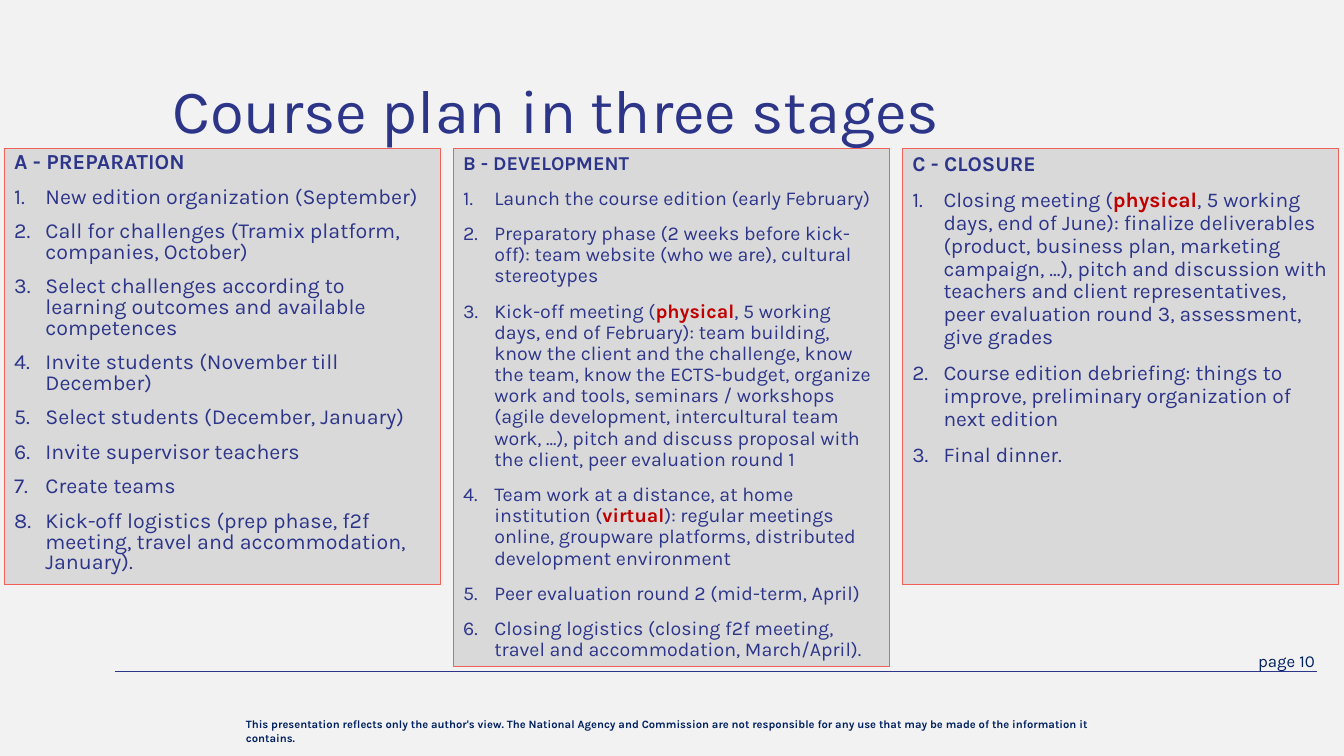
"""Build a slide with the three stages of a course plan."""
from lxml import etree
from pptx import Presentation
from pptx.dml.color import RGBColor
from pptx.enum.shapes import MSO_CONNECTOR, MSO_SHAPE
from pptx.enum.text import MSO_ANCHOR, MSO_AUTO_SIZE, PP_ALIGN
from pptx.oxml.ns import qn
from pptx.util import Inches, Pt

STRAIGHT = MSO_CONNECTOR.STRAIGHT
RECTANGLE = MSO_SHAPE.RECTANGLE
TOP, MIDDLE = MSO_ANCHOR.TOP, MSO_ANCHOR.MIDDLE
FIXED, GROW = MSO_AUTO_SIZE.NONE, MSO_AUTO_SIZE.SHAPE_TO_FIT_TEXT
LEFT, RIGHT = PP_ALIGN.LEFT, PP_ALIGN.RIGHT

SLIDE_WIDTH, SLIDE_HEIGHT = 13.33, 7.5
FIRST_LEFT, LAST_LEFT = 0.04, 8.95
STAGE_TOP, STAGE_WIDTH = 1.47, 4.33
INDENT = 0.31
FONT = "Karla"
COLORS = {
    "background": "F2F2F2",
    "panel": "D9D9D9",
    "border": "F16157",
    "title": "2D3589",
    "text": "2D358A",
    "accent": "C00000",
    "footer": "002060",
}

STAGES = [
    {
        "heading": "A - PREPARATION", "height": 4.33, "size": 15.3, "spacing": 0.8,
        "steps": [
            "New edition organization (September)",
            "Call for challenges (Tramix platform, companies, October)",
            "Select challenges according to learning outcomes and available competences",
            "Invite students (November till December)",
            "Select students (December, January)",
            "Invite supervisor teachers",
            "Create teams",
            "Kick-off logistics (prep phase, f2f meeting, travel and accommodation, January).",
        ],
    },
    {
        "heading": "B - DEVELOPMENT", "height": 5.14, "size": 14, "spacing": 0.9,
        "steps": [
            "Launch the course edition (early February)",
            "Preparatory phase (2 weeks before kick-off): team website (who we are), "
            "cultural stereotypes",
            "Kick-off meeting (*physical*, 5 working days, end of February): team building, "
            "know the client and the challenge, know the team, know the ECTS-budget, "
            "organize work and tools, seminars / workshops (agile development, "
            "intercultural team work, ...), pitch and discuss proposal with the client, "
            "peer evaluation round 1",
            "Team work at a distance, at home institution (*virtual*): regular meetings "
            "online, groupware platforms, distributed development environment",
            "Peer evaluation round 2 (mid-term, April)",
            "Closing logistics (closing f2f meeting, travel and accommodation, March/April).",
        ],
    },
    {
        "heading": "C - CLOSURE", "height": 4.33, "size": 15, "spacing": 0.9,
        "steps": [
            "Closing meeting (*physical*, 5 working days, end of June): finalize "
            "deliverables (product, business plan, marketing campaign, ...), pitch and "
            "discussion with teachers and client representatives, peer evaluation "
            "round 3, assessment, give grades",
            "Course edition debriefing: things to improve, preliminary organization of "
            "next edition",
            "Final dinner.",
        ],
    },
]


def color(name):
    """Return the named colour."""
    return RGBColor.from_string(COLORS[name])


def place(shape, left, top, width, height):
    """Move and size a shape, in inches."""
    shape.left, shape.top = Inches(left), Inches(top)
    shape.width, shape.height = Inches(width), Inches(height)


def set_frame(shape, anchor=TOP, auto_size=FIXED):
    """Wrap the text of a shape and return its frame."""
    frame = shape.text_frame
    frame.word_wrap = True
    frame.auto_size = auto_size
    frame.vertical_anchor = anchor
    return frame


def write(para, text, size=12, tone="text", bold=False, align=LEFT, spacing=1.0, before=0):
    """Write text into a paragraph, with words between asterisks accented."""
    para.alignment = align
    para.line_spacing = spacing
    para.space_before = Pt(before)
    for position, part in enumerate(text.split("*")):
        accented = position % 2 == 1
        span = para.add_run()
        span.text = part
        span.font.name = FONT
        span.font.size = Pt(size)
        span.font.bold = bold or accented
        span.font.color.rgb = color("accent" if accented else tone)


def set_bullet(para, numbered):
    """Number a paragraph with a hanging indent, or clear its bullet."""
    properties = para._p.get_or_add_pPr()
    indent = Inches(INDENT) if numbered else 0
    properties.set("marL", str(indent))
    properties.set("indent", str(-indent))
    if numbered:
        etree.SubElement(properties, qn("a:buFont"), typeface="+mj-lt")
        etree.SubElement(properties, qn("a:buAutoNum"), type="arabicPeriod")
    else:
        etree.SubElement(properties, qn("a:buNone"))


def fill_stage(shape, column, stage):
    """Turn a shape into the panel of one stage."""
    pitch = (LAST_LEFT - FIRST_LEFT) / (len(STAGES) - 1)
    place(shape, FIRST_LEFT + column * pitch, STAGE_TOP, STAGE_WIDTH, stage["height"])
    shape.shadow.inherit = False
    shape.fill.solid()
    shape.fill.fore_color.rgb = color("panel")
    shape.line.color.rgb = color("border")
    shape.line.width = Pt(0.75)
    frame = set_frame(shape)
    look = {"size": stage["size"], "spacing": stage["spacing"]}
    set_bullet(frame.paragraphs[0], False)
    write(frame.paragraphs[0], stage["heading"], bold=True, **look)
    for step in stage["steps"]:
        para = frame.add_paragraph()
        set_bullet(para, True)
        write(para, step, before=10, **look)


def add_label(page, text, area, anchor=TOP, auto_size=FIXED, **look):
    """Add a text box in the footer colour."""
    box = page.shapes.add_textbox(*map(Inches, area))
    frame = set_frame(box, anchor, auto_size)
    write(frame.paragraphs[0], text, tone="footer", **look)


def add_rule(page, left, right, height):
    """Add a thin horizontal line."""
    rule = page.shapes.add_connector(STRAIGHT, *map(Inches, (left, height, right, height)))
    rule.line.color.rgb = color("text")
    rule.line.width = Pt(0.5)
    etree.SubElement(rule._element.spPr, qn("a:effectLst"))


def main():
    """Build and save the deck."""
    deck = Presentation()
    deck.slide_width, deck.slide_height = Inches(SLIDE_WIDTH), Inches(SLIDE_HEIGHT)
    page = deck.slides.add_slide(deck.slide_layouts[1])
    page.background.fill.solid()
    page.background.fill.fore_color.rgb = color("background")

    add_label(
        page,
        "This presentation reflects only the author's view. The National Agency and "
        "Commission are not responsible for any use that may be made of the information "
        "it contains.",
        (2.34, 7.07, 9.07, 0.24), auto_size=GROW, size=8, bold=True,
    )
    add_rule(page, 1.14, 13.06, 6.66)
    add_label(page, "page 10", (12.17, 6.36, 0.97, 0.4), anchor=MIDDLE, align=RIGHT)

    title = page.shapes.title
    place(title, 1.61, 0.4, 10.8, 1.45)
    heading = set_frame(title, MIDDLE).paragraphs[0]
    write(heading, "Course plan in three stages", size=44, tone="title", spacing=0.9)

    for column, stage in enumerate(STAGES):
        if column == 0:
            panel = page.placeholders[1]
        else:
            panel = page.shapes.add_shape(RECTANGLE, 0, 0, 0, 0)
        fill_stage(panel, column, stage)
    deck.save("out.pptx")


if __name__ == "__main__":
    main()
